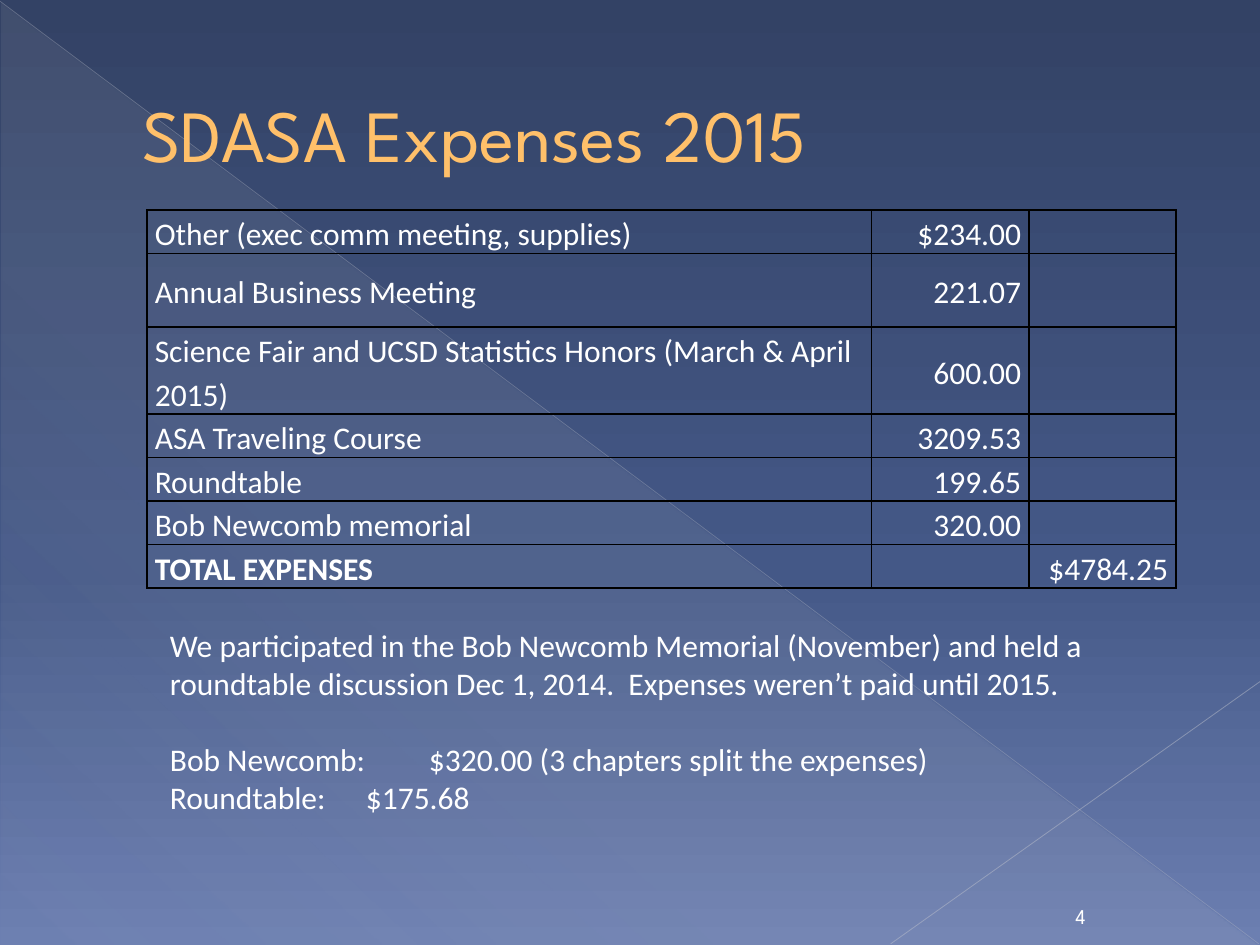
from lxml.etree import SubElement
from pptx import Presentation
from pptx.dml.color import RGBColor
from pptx.enum.shapes import MSO_CONNECTOR, MSO_SHAPE
from pptx.enum.text import MSO_ANCHOR, MSO_AUTO_SIZE, PP_ALIGN
from pptx.oxml.ns import qn
from pptx.util import Pt

WHITE = "FFFFFF"
ROWS = [
    ("Other (exec comm meeting, supplies)", "$234.00", ""),
    ("Annual Business Meeting", "221.07", ""),
    ("Science Fair and UCSD Statistics Honors (March & April 2015)", "600.00", ""),
    ("ASA Traveling Course", "3209.53", ""),
    ("Roundtable", "199.65", ""),
    ("Bob Newcomb memorial", "320.00", ""),
    ("TOTAL EXPENSES", "", "$4784.25"),
]
COL_WIDTHS = [414, 90, 84]
ROW_HEIGHTS = [23, 42, 42, 23, 23, 23, 21.6]
NOTES = [
    ("We participated in the Bob Newcomb Memorial (November) and held a", 0),
    ("roundtable discussion Dec 1, 2014.  Expenses weren’t paid until 2015.", 0),
    ("Bob Newcomb:\t $320.00 (3 chapters split the expenses)", 22),
    ("Roundtable: \t $175.68", 0),
]


def rgb(color):
    return RGBColor.from_string(color)


def add_color(parent, color, alpha=100):
    clr = SubElement(parent, qn("a:srgbClr"), val=color)
    if alpha < 100:
        SubElement(clr, qn("a:alpha"), val=str(alpha * 1000))


def set_gradient(fill, element, stops, clockwise):
    fill.gradient()
    fill.gradient_angle = 360 - clockwise
    gs_list = next(element.iter(qn("a:gsLst")))
    for gs in list(gs_list):
        gs_list.remove(gs)
    for pos, color, alpha in stops:
        gs = SubElement(gs_list, qn("a:gs"), pos=str(pos * 1000))
        add_color(gs, color, alpha)


def add_line(s, x1, y1, x2, y2, color, width, alpha):
    line = s.shapes.add_connector(
        MSO_CONNECTOR.STRAIGHT, Pt(x1), Pt(y1), Pt(x2), Pt(y2))
    line.line.width = Pt(width)
    line.line.color.rgb = rgb(color)
    clr = next(line._element.spPr.iter(qn("a:srgbClr")))
    SubElement(clr, qn("a:alpha"), val=str(alpha * 1000))
    SubElement(line._element.spPr, qn("a:effectLst"))


def add_run(p, text, size=18, font="Calibri", color=WHITE, bold=False):
    r = p.add_run()
    r.text = text
    r.font.size = Pt(size)
    r.font.name = font
    r.font.bold = bold
    r.font.color.rgb = rgb(color)
    return r


def add_text_box(s, x, y, w, h, anchor=MSO_ANCHOR.TOP, wrap=True):
    tf = s.shapes.add_textbox(Pt(x), Pt(y), Pt(w), Pt(h)).text_frame
    tf.word_wrap = wrap
    tf.vertical_anchor = anchor
    return tf


def add_title(s, text):
    tf = add_text_box(s, 36, 21, 648, 110, MSO_ANCHOR.MIDDLE)
    tf.margin_left = Pt(45.4)
    r = add_run(tf.paragraphs[0], text, 42, "League Spartan", "FFC06A")
    rPr = r.font._element
    ln = SubElement(rPr, qn("a:ln"), w=str(Pt(0.5)))
    add_color(SubElement(ln, qn("a:solidFill")), "A67800")
    rPr.insert(0, ln)


def set_borders(cell):
    tcPr = cell._tc.get_or_add_tcPr()
    for i, side in enumerate(("a:lnL", "a:lnR", "a:lnT", "a:lnB")):
        ln = SubElement(tcPr, qn(side), w=str(Pt(1)))
        add_color(SubElement(ln, qn("a:solidFill")), "000000")
        tcPr.insert(i, ln)


def fill_cell(cell, text, align, bold):
    cell.fill.background()
    cell.vertical_anchor = MSO_ANCHOR.MIDDLE
    cell.margin_left = cell.margin_right = Pt(4.5)
    cell.margin_top = cell.margin_bottom = 0
    set_borders(cell)
    if text:
        p = cell.text_frame.paragraphs[0]
        p.alignment = align
        p.line_spacing = 1.15
        add_run(p, text, bold=bold)


def add_expenses(s, x, y):
    table = s.shapes.add_table(
        len(ROWS), len(COL_WIDTHS), Pt(x), Pt(y),
        Pt(sum(COL_WIDTHS)), Pt(sum(ROW_HEIGHTS))).table
    table.first_row = table.horz_banding = False
    for col, width in zip(table.columns, COL_WIDTHS):
        col.width = Pt(width)
    for row, height, texts in zip(table.rows, ROW_HEIGHTS, ROWS):
        row.height = Pt(height)
        for i, (cell, text) in enumerate(zip(row.cells, texts)):
            align = PP_ALIGN.RIGHT if i else PP_ALIGN.LEFT
            fill_cell(cell, text, align, text.startswith("TOTAL"))


def add_notes_text(s):
    tf = add_text_box(s, 90, 354.2, 546.5, 116.6, wrap=False)
    tf.auto_size = MSO_AUTO_SIZE.SHAPE_TO_FIT_TEXT
    for i, (text, gap) in enumerate(NOTES):
        p = tf.add_paragraph() if i else tf.paragraphs[0]
        p.space_before = Pt(gap)
        add_run(p, text)


def add_page_number(s, number):
    tf = add_text_box(s, 597.6, 510.5, 39.6, 23.8, MSO_ANCHOR.BOTTOM)
    p = tf.paragraphs[0]
    p.alignment = PP_ALIGN.CENTER
    add_run(p, number, 12, "League Spartan")


def add_backdrop(s):
    set_gradient(s.background.fill, s._element, [
        (0, "334265", 100), (60, "445887", 100), (100, "6C7FB1", 100)], 90)
    sp = s.shapes.add_shape(
        MSO_SHAPE.RIGHT_TRIANGLE, Pt(0.7), Pt(1.4), Pt(718.6), Pt(538.6))
    sp.shadow.inherit = False
    sp.line.fill.background()
    set_gradient(sp.fill, sp._element, [
        (0, "D4D4D6", 10), (70, "D4D4D6", 8), (100, "D4D4D6", 1)], 133)
    add_line(s, 0, 0.7, 719.3, 539.3, "B9BDC8", 0.39, 35)
    add_line(s, 720, 389.5, 509, 539.3, "C1C4CE", 0.47, 45)


def main():
    prs = Presentation()
    prs.slide_width, prs.slide_height = Pt(720), Pt(540)
    s = prs.slides.add_slide(prs.slide_layouts[6])
    add_backdrop(s)
    add_title(s, "SDASA Expenses 2015")
    add_expenses(s, 84, 120)
    add_page_number(s, "4")
    add_notes_text(s)
    prs.save("out.pptx")


if __name__ == "__main__":
    main()
